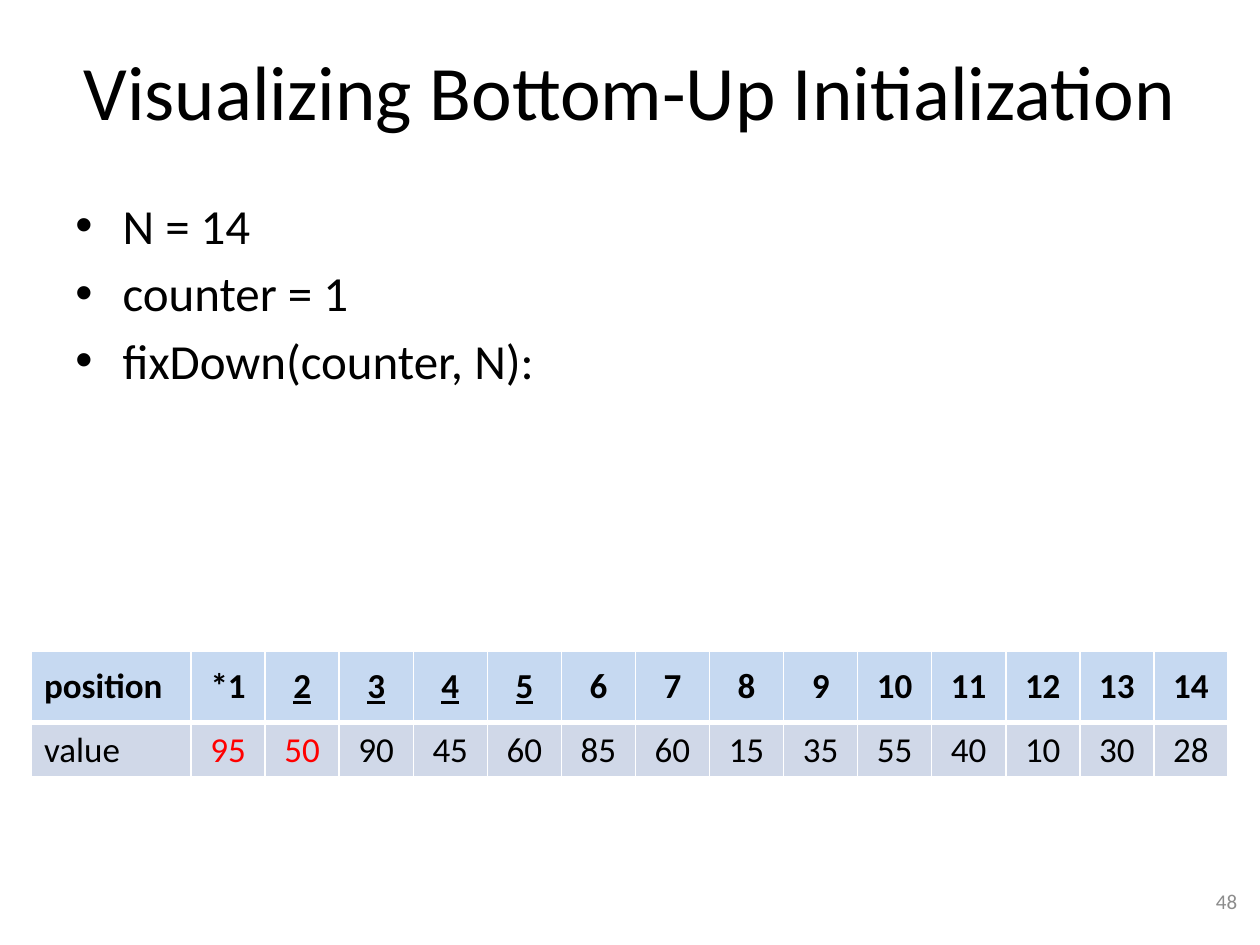
import pptx
import pptx.dml.color
import pptx.enum.text
import pptx.oxml
import pptx.util
import lxml.etree

ALIGN = pptx.enum.text.PP_ALIGN
ANCHOR = pptx.enum.text.MSO_ANCHOR
NAMESPACE = "http://schemas.openxmlformats.org/drawingml/2006/main"


def color(value):
    return pptx.dml.color.RGBColor.from_string(value)


class SlideBuilder:
    font = "Calibri"
    ink = "000000"
    columns = 120
    rows = 90

    def __init__(self, deck):
        self.deck = deck
        self.page = deck.slides.add_slide(deck.slide_layouts[6])

    def across(self, count):
        return round(self.deck.slide_width * count / self.columns)

    def down(self, count):
        return round(self.deck.slide_height * count / self.rows)

    def place(self, left, top, width, height):
        return self.across(left), self.down(top), self.across(width), self.down(height)

    def fill_para(self, para, text, size, ink=None, align=ALIGN.LEFT, bold=False, underline=False):
        para.text = text
        para.alignment = align
        font = para.font
        font.name = self.font
        font.size = pptx.util.Pt(size)
        font.color.rgb = color(ink or self.ink)
        font.bold = bold
        font.underline = underline

    def text(self, area, text, size, align, ink=None):
        frame = self.page.shapes.add_textbox(*self.place(*area)).text_frame
        frame.word_wrap = True
        frame.vertical_anchor = ANCHOR.MIDDLE
        self.fill_para(frame.paragraphs[0], text, size, ink, align)

    def bullets(self, area, lines, size, indent):
        frame = self.page.shapes.add_textbox(*self.place(*area)).text_frame
        frame.word_wrap = True
        for number, line in enumerate(lines):
            para = frame.add_paragraph() if number else frame.paragraphs[0]
            self.fill_para(para, line, size)
            para.space_before = pptx.util.Pt(size * 0.18)
            properties = para._p.get_or_add_pPr()
            properties.set("marL", str(self.across(indent)))
            properties.set("indent", str(-self.across(indent)))
            for tag, key, value in (("buFont", "typeface", "Arial"), ("buChar", "char", "•")):
                mark = lxml.etree.Element(f"{{{NAMESPACE}}}{tag}")
                mark.set(key, value)
                properties.insert_element_before(mark, "a:tabLst", "a:defRPr", "a:extLst")

    def border(self, cell, widths, ink):
        properties = cell._tc.get_or_add_tcPr()
        for side, width in zip("LRTB", widths):
            properties.append(pptx.oxml.parse_xml(
                f'<a:ln{side} xmlns:a="{NAMESPACE}" w="{pptx.util.Pt(width)}">'
                f'<a:solidFill><a:srgbClr val="{ink}"/></a:solidFill></a:ln{side}>'))

    def table(self, area, label_width, heights, records, fills, size, underlined, highlighted):
        count = len(records[0])
        grid = self.page.shapes.add_table(len(records), count, *self.place(*area)).table
        value_width = (area[2] - label_width) / (count - 1)
        for index, column in enumerate(grid.columns):
            column.width = self.across(value_width if index else label_width)
        for row, (record, height, fill) in enumerate(zip(records, heights, fills)):
            header = row == 0
            grid.rows[row].height = self.down(height)
            for index, value in enumerate(record):
                cell = grid.cell(row, index)
                cell.vertical_anchor = ANCHOR.MIDDLE
                top, bottom = (1, 3) if header else (3, 1)
                self.border(cell, (1, 1, top, bottom), "FFFFFF")
                cell.fill.solid()
                cell.fill.fore_color.rgb = color(fill)
                self.fill_para(
                    cell.text_frame.paragraphs[0], str(value), size,
                    ink="FF0000" if not header and index in highlighted else None,
                    align=ALIGN.CENTER if index else ALIGN.LEFT,
                    bold=header,
                    underline=header and index in underlined)


def main():
    deck = pptx.Presentation()
    deck.slide_width = pptx.util.Inches(10)
    deck.slide_height = pptx.util.Inches(7.5)
    slide = SlideBuilder(deck)
    slide.text((6, 1, 108, 15), "Visualizing Bottom-Up Initialization", 44, ALIGN.CENTER)
    slide.bullets((6, 18, 108, 31), ["N = 14", "counter = 1", "fixDown(counter, N):"], 28, 4.5)
    slide.text((91, 83.4, 28, 4.8), "48", 12, ALIGN.RIGHT, "8C8C8C")
    positions = ["position", "*1", *range(2, 15)]
    values = ["value", 95, 50, 90, 45, 60, 85, 60, 15, 35, 55, 40, 10, 30, 28]
    slide.table(
        (3, 62, 114, 12), 15.2, (6.8, 5), (positions, values), ("C6D9F1", "D0D8E8"),
        20, underlined=range(2, 6), highlighted=range(1, 3))
    deck.save("out.pptx")


if __name__ == "__main__":
    main()
